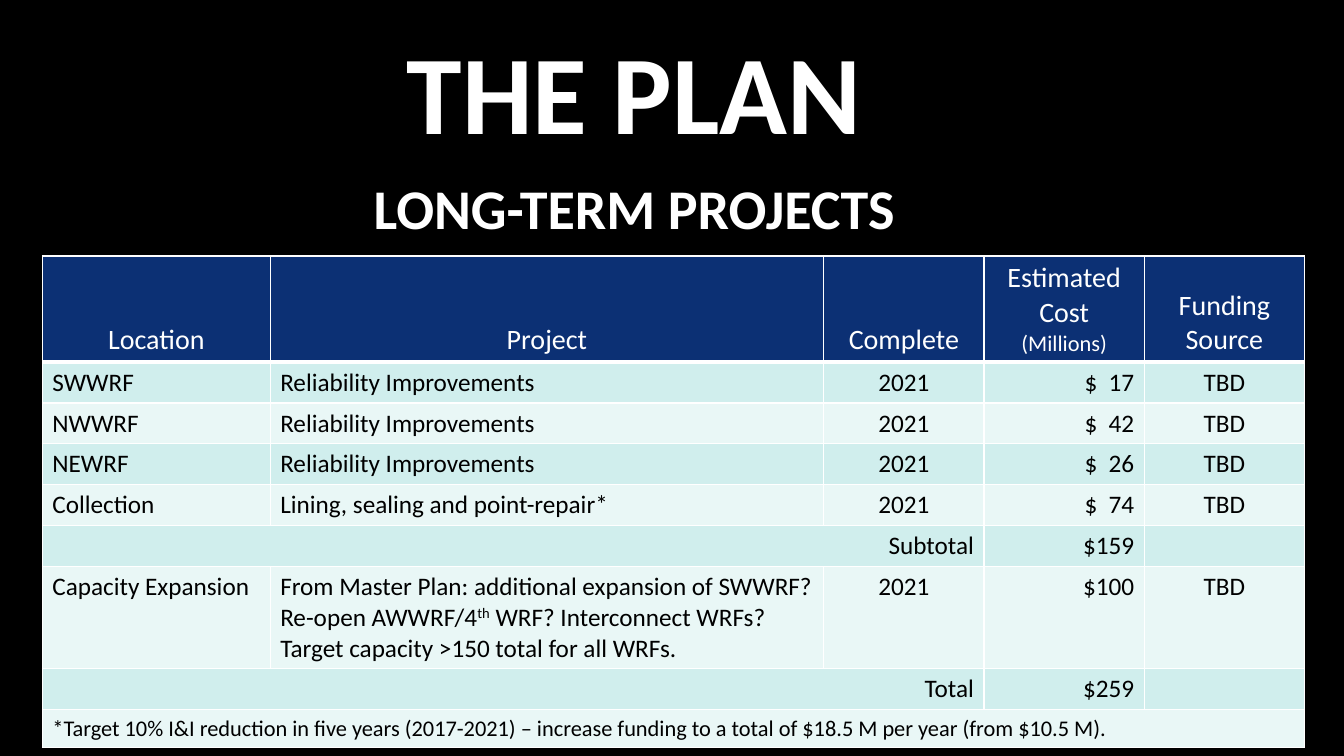
from lxml import etree
from pptx import Presentation
from pptx.dml.color import RGBColor
from pptx.enum.text import MSO_ANCHOR, PP_ALIGN
from pptx.oxml.ns import qn
from pptx.util import Inches, Pt

LEFT, CENTER, RIGHT = PP_ALIGN.LEFT, PP_ALIGN.CENTER, PP_ALIGN.RIGHT
TOP, BOTTOM = MSO_ANCHOR.TOP, MSO_ANCHOR.BOTTOM
FONT = "Calibri"
COLORS = {"black": "000000", "white": "FFFFFF", "header": "0C3074",
          "dark_band": "D0EEED", "light_band": "E9F7F6"}

COLUMN_WIDTHS = [2.26, 5.49, 1.59, 1.59, 1.59]
COLUMN_ALIGNMENTS = [LEFT, LEFT, CENTER, RIGHT, CENTER]
ROW_HEIGHTS = [1.05, 0.4, 0.4, 0.4, 0.4, 0.4, 1.01, 0.4, 0.37]
HEADERS = ["Location", "Project", "Complete", "Estimated Cost\n(Millions)", "Funding Source"]
EXPANSION = ["From Master Plan: additional expansion of SWWRF? Re-open AWWRF/4", "th",
             " WRF? Interconnect WRFs? Target capacity >150 total for all WRFs."]
FOOTNOTE = ("*Target 10% I&I reduction in five years (2017-2021) – increase funding "
            "to a total of $18.5 M per year (from $10.5 M).")
ROWS = [
    ["SWWRF", "Reliability Improvements", "2021", "$  17", "TBD"],
    ["NWWRF", "Reliability Improvements", "2021", "$  42", "TBD"],
    ["NEWRF", "Reliability Improvements", "2021", "$  26", "TBD"],
    ["Collection", "Lining, sealing and point-repair*", "2021", "$  74", "TBD"],
    ["Subtotal", "", "", "$159", ""],
    ["Capacity Expansion", EXPANSION, "2021", "$100", "TBD"],
    ["Total", "", "", "$259", ""],
    [FOOTNOTE, "", "", "", ""],
]
SPANS = {"Subtotal": 3, "Total": 3, FOOTNOTE: 5}


def rgb(name):
    """Return the named colour."""
    return RGBColor.from_string(COLORS[name])


def set_font(font, size, color, bold=False):
    """Apply the slide's typeface with a size, colour and weight."""
    font.name, font.size, font.bold = FONT, Pt(size), bold
    font.color.rgb = rgb(color)


def add_borders(cell, top, bottom):
    """Draw white cell borders, with the top and bottom widths in points."""
    properties = cell._tc.get_or_add_tcPr()
    for side, width in (("L", 1), ("R", 1), ("T", top), ("B", bottom)):
        line = etree.SubElement(properties, qn(f"a:ln{side}"), w=str(Pt(width)))
        fill = etree.SubElement(line, qn("a:solidFill"))
        etree.SubElement(fill, qn("a:srgbClr"), val=COLORS["white"])


def fill_cell(cell, content, size, color, alignment):
    """Write a cell's text; a list holds text, superscript and text."""
    frame = cell.text_frame
    if isinstance(content, list):
        for index, words in enumerate(content):
            span = frame.paragraphs[0].add_run()
            span.text = words
            if index == 1:
                span.font._element.set("baseline", "30000")
    else:
        frame.text = content
    for para in frame.paragraphs:
        para.alignment = alignment
        set_font(para.font, size, color)


def add_title(page, left, top, width, height):
    """Set the two-line heading in the title placeholder."""
    box = page.shapes.title
    box.left, box.top, box.width, box.height = map(Inches, (left, top, width, height))
    frame = box.text_frame
    frame.word_wrap = True
    frame.vertical_anchor = TOP
    para = frame.paragraphs[0]
    para.alignment = CENTER
    para.line_spacing = Pt(60)
    set_font(para.font, 80, "white", bold=True)
    para.add_run().text = "THE PLAN"
    para.add_line_break()
    subtitle = para.add_run()
    subtitle.text = "LONG-TERM PROJECTS"
    subtitle.font.size = Pt(40)


def add_projects(page, left, top):
    """Build the table of projects, costs and funding."""
    frame = page.shapes.add_table(
        len(ROW_HEIGHTS), len(COLUMN_WIDTHS), Inches(left), Inches(top),
        Inches(sum(COLUMN_WIDTHS)), Inches(sum(ROW_HEIGHTS)))
    table = frame.table
    table.first_row = table.horz_banding = False
    for column, width in zip(table.columns, COLUMN_WIDTHS):
        column.width = Inches(width)
    for row, height in zip(table.rows, ROW_HEIGHTS):
        row.height = Inches(height)

    for column, words in enumerate(HEADERS):
        cell = table.cell(0, column)
        add_borders(cell, 1, 3)
        cell.fill.solid()
        cell.fill.fore_color.rgb = rgb("header")
        cell.vertical_anchor = BOTTOM
        fill_cell(cell, words, 20, "white", CENTER)
        for unit in cell.text_frame.paragraphs[1:]:
            unit.font.size = Pt(16)

    for number, row in enumerate(ROWS, start=1):
        span = SPANS.get(row[0], 1)
        size = 16 if row[0] == FOOTNOTE else 18
        for column, content in enumerate(row):
            cell = table.cell(number, column)
            add_borders(cell, 3 if number == 1 else 1, 1)
            cell.fill.solid()
            cell.fill.fore_color.rgb = rgb("dark_band" if number % 2 else "light_band")
            alignment = RIGHT if span == 3 and column == 0 else COLUMN_ALIGNMENTS[column]
            fill_cell(cell, content, size, "black", alignment)
        if span > 1:
            table.cell(number, 0).merge(table.cell(number, span - 1))


def main():
    """Create the deck and save it."""
    deck = Presentation()
    deck.slide_width, deck.slide_height = Inches(13.33), Inches(7.5)
    page = deck.slides.add_slide(deck.slide_layouts[5])
    page.background.fill.solid()
    page.background.fill.fore_color.rgb = rgb("black")
    add_title(page, 0.75, 0.67, 11.08, 0.88)
    add_projects(page, 0.42, 2.54)
    deck.save("out.pptx")


if __name__ == "__main__":
    main()
